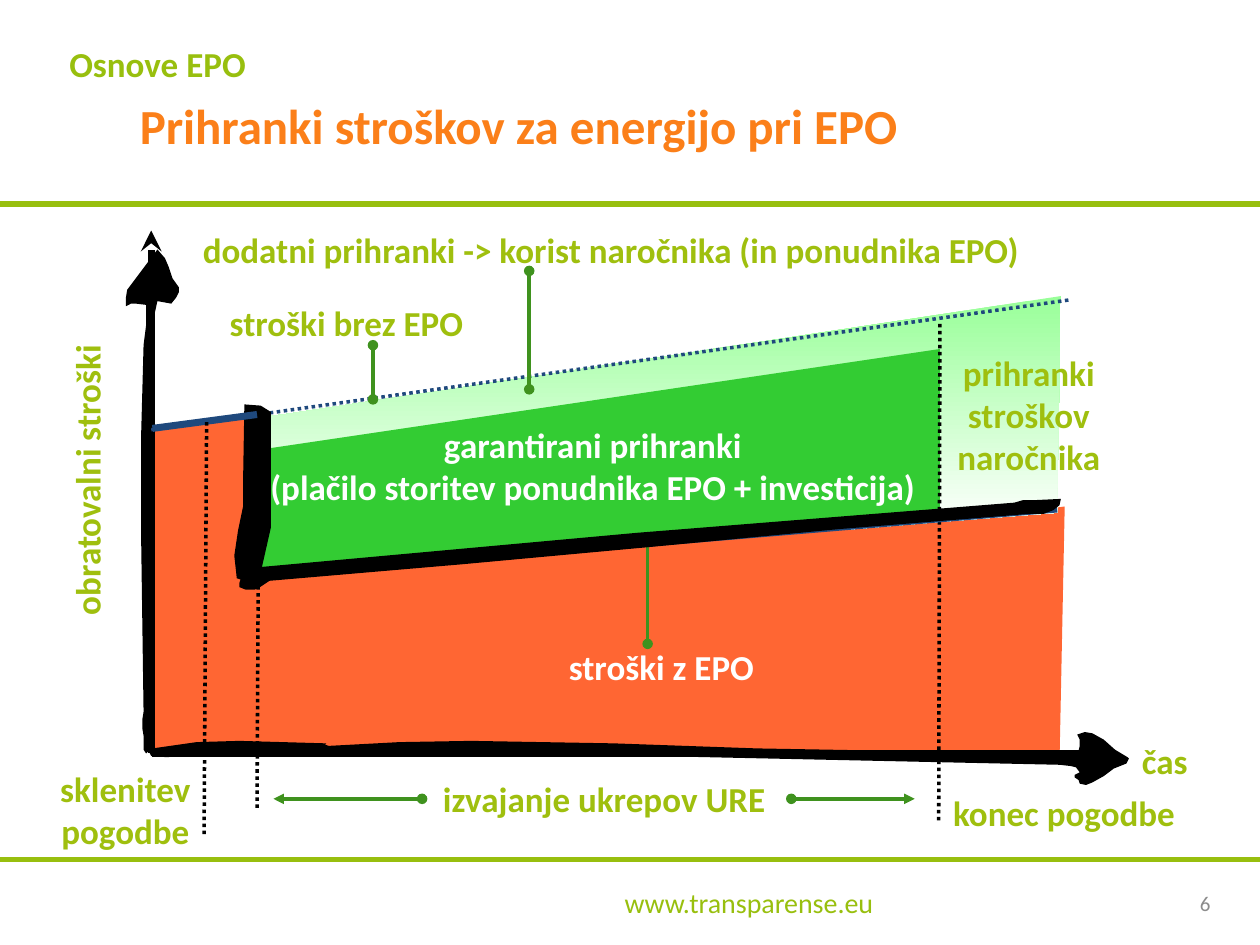
from lxml import etree
from pptx import Presentation
from pptx.dml.color import RGBColor
from pptx.enum.dml import MSO_LINE
from pptx.enum.shapes import MSO_CONNECTOR
from pptx.enum.text import MSO_ANCHOR, PP_ALIGN
from pptx.oxml.ns import qn
from pptx.util import Inches, Pt

STRAIGHT = MSO_CONNECTOR.STRAIGHT
DOTS = MSO_LINE.ROUND_DOT
TOP, MIDDLE = MSO_ANCHOR.TOP, MSO_ANCHOR.MIDDLE
LEFT, CENTER = PP_ALIGN.LEFT, PP_ALIGN.CENTER

RULE = RGBColor(0x98, 0xBF, 0x0E)
LABEL = RGBColor(0x9F, 0xBF, 0x0E)
TITLE = RGBColor(0xFB, 0x7F, 0x19)
COST = RGBColor(0xFF, 0x66, 0x33)
SAVED = RGBColor(0x33, 0xCC, 0x33)
EXTRA = RGBColor(0x99, 0xFF, 0x99)
POINTER = RGBColor(0x3F, 0x92, 0x1E)
NAVY = RGBColor(0x1F, 0x49, 0x7D)
GRAY = RGBColor(0x8C, 0x8C, 0x8C)
BLACK = RGBColor(0, 0, 0)
WHITE = RGBColor(255, 255, 255)

# Outlines as (x, y) points in inches
COST_AREA = [
    (1.2, 3.39), (1.2, 5.97), (8.41, 5.99), (8.45, 4.02), (8.3, 4.04), (6.61, 4.07),
    (6.6, 4.05), (2.03, 4.58), (2.03, 4.43), (2.04, 3.3), (1.89, 3.31)]
EXTRA_AREA = [
    (2.06, 3.31), (2.07, 3.71), (6.64, 2.89), (6.64, 4.17), (6.65, 4.21),
    (7.49, 4.14), (8.39, 4.07), (8.42, 2.35), (2.25, 3.29), (2.05, 3.31)]
SAVED_AREA = [
    (2.06, 3.57), (2.05, 4.52), (2.07, 4.53), (7.45, 4.1), (7.46, 4.02), (7.46, 2.77)]
COST_BRUSH = [
    (2.15, 3.27), (2.15, 4.19), (2.08, 4.5), (5.05, 4.23), (8.05, 3.99), (8.12, 3.97),
    (8.21, 3.97), (8.42, 3.96), (8.41, 4.01), (8.36, 4.05), (8.28, 4.08), (8.16, 4.08),
    (6.66, 4.2), (5.18, 4.34), (3.66, 4.48), (2.14, 4.61), (2.05, 4.67), (2.02, 4.68),
    (1.95, 4.68), (1.9, 4.66), (1.9, 4.63), (1.91, 4.6), (1.88, 4.59), (1.86, 4.41),
    (1.89, 4.21), (1.93, 4.02), (1.93, 3.82), (1.94, 3.21), (2.07, 3.22)]
AXIS_BRUSH = [
    (1.42, 2.28), (1.42, 2.32), (1.4, 2.36), (1.36, 2.41), (1.25, 2.39), (1.23, 2.48),
    (1.22, 2.57), (1.21, 2.76), (1.19, 3.93), (1.2, 4.51), (1.22, 5.08), (1.22, 5.51),
    (1.23, 5.72), (1.21, 5.94), (1.56, 5.89), (1.9, 5.88), (2.59, 5.9), (2.58, 5.91),
    (2.61, 5.92), (3.17, 5.89), (3.74, 5.88), (4.87, 5.9), (6.01, 5.94), (7.15, 5.96),
    (7.86, 5.98), (8.55, 6), (8.57, 5.92), (8.57, 5.87), (8.55, 5.83), (8.61, 5.81),
    (8.67, 5.82), (8.76, 5.87), (8.85, 5.95), (8.95, 6.01), (8.96, 6.02), (8.94, 6.06),
    (8.84, 6.1), (8.76, 6.16), (8.67, 6.21), (8.62, 6.23), (8.57, 6.22), (8.56, 6.19),
    (8.53, 6.17), (8.53, 6.15), (8.57, 6.13), (8.54, 6.09), (8.5, 6.08), (8.41, 6.07),
    (4.7, 5.99), (4.16, 5.97), (3.63, 5.96), (2.56, 6), (2.52, 5.96), (2.42, 5.99),
    (2.3, 6), (2.18, 5.98), (2.04, 5.98), (1.9, 5.99), (1.74, 5.98), (1.61, 5.98),
    (1.47, 5.99), (1.33, 6.01), (1.2, 6), (1.18, 5.96), (1.16, 5.98), (1.14, 5.95),
    (1.14, 5.84), (1.13, 5.78), (1.13, 5.71), (1.14, 5.65), (1.12, 4.21), (1.12, 3.48),
    (1.14, 2.74), (1.16, 2.58), (1.16, 2.42), (1.08, 2.41), (1.04, 2.41), (1, 2.43),
    (1, 2.36), (1.01, 2.3), (1.25, 1.98), (1.31, 2.05), (1.34, 2.12), (1.37, 2.21)]

# Line styles: colour, width, dash, start arrowhead, end arrowhead
STYLES = {
    "rule": (RULE, 3, None, None, None),
    "up": (BLACK, 4, None, "stealth", None),
    "right": (BLACK, 4, None, None, "stealth"),
    "date": (BLACK, 2, DOTS, None, None),
    "trend": (NAVY, 2, DOTS, None, None),
    "drop": (NAVY, 2, None, None, None),
    "level": (NAVY, 4, None, None, None),
    "pointer": (POINTER, 2, None, "oval", "oval"),
    "span": (POINTER, 2, None, "triangle", "oval")}

# Back to front: an area has points and fill, a line has style and ends
DRAWING = [
    ("rule", (0, 1.62, 10, 1.62)),
    ("rule", (0, 6.82, 10, 6.82)),
    (COST_AREA, COST),
    ("up", (1.2, 1.83, 1.2, 5.98)),
    (EXTRA_AREA, [EXTRA, WHITE]),
    (SAVED_AREA, SAVED),
    ("date", (7.46, 2.57, 7.45, 6.53)),
    ("date", (2.05, 4.54, 2.04, 6.42)),
    ("trend", (1.2, 3.41, 8.49, 2.38)),
    ("right", (1.21, 5.98, 8.85, 5.98)),
    ("pointer", (2.96, 2.74, 2.96, 3.17)),
    ("pointer", (5.14, 4.3, 5.14, 5.11)),
    ("drop", (2.05, 3.28, 2.05, 4.55)),
    ("level", (2.05, 4.57, 8.39, 4.04)),
    ("pointer", (4.2, 2.15, 4.2, 3.09)),
    (COST_BRUSH, BLACK),
    (AXIS_BRUSH, BLACK),
    ("level", (1.21, 3.4, 2.04, 3.29)),
    ("date", (1.64, 3.35, 1.62, 6.63)),
    ("span", (2.17, 6.34, 3.35, 6.34)),
    ("span", (7.26, 6.34, 6.28, 6.34))]

# Box, lines of text, and what differs from a plain chart label
BASE = dict(size=20, color=LABEL, bold=True, align=CENTER, anchor=TOP,
            inset=(0.02, 0.01), turn=0)
TEXTS = [
    ((3.82, 6.98, 4.25, 0.37), ["www.transparense.eu"],
     dict(size=16, color=RULE, bold=False, inset=(0.1, 0.05))),
    ((0.55, 0.13, 7.13, 1.26), ["Osnove EPO"],
     dict(color=RULE, align=LEFT, inset=(0, 0.21))),
    ((7.42, 6.27, 2.05, 0.36), ["konec pogodbe"], {}),
    ((3.3, 6.16, 2.99, 0.36), ["izvajanje ukrepov URE"], {}),
    ((-0.97, 3.63, 3.32, 0.36), ["obratovalni stroški"], dict(turn=270)),
    ((4.31, 5.11, 1.88, 0.36), ["stroški z EPO"], dict(color=WHITE, anchor=MIDDLE)),
    ((7.56, 2.78, 1.21, 1.03), ["prihranki stroškov", "naročnika"], {}),
    ((2, 3.35, 5.41, 0.7),
     ["garantirani prihranki", "(plačilo storitev ponudnika EPO + investicija)"],
     dict(color=WHITE)),
    ((1.53, 1.77, 7.32, 0.42),
     ["dodatni prihranki -> korist naročnika (in ponudnika EPO)"],
     dict(align=LEFT, inset=(0.08, 0.04))),
    ((1.2, 2.38, 3.1, 0.36), ["stroški brez EPO"], dict(anchor=MIDDLE)),
    ((8.85, 5.86, 0.79, 0.36), ["čas"], {}),
    ((9.25, 6.97, 0.63, 0.4), ["6"],
     dict(size=12, color=GRAY, bold=False, anchor=MIDDLE, inset=(0.1, 0.05))),
    ((0, 6.08, 1.99, 0.7), ["sklenitev pogodbe"], {})]
HEADING = "Prihranki stroškov za energijo pri EPO"


def add_area(shapes, pts, fill):
    """Draw a closed outline; a list of two colours gives a gradient."""
    pts = [(Inches(x), Inches(y)) for x, y in pts]
    pen = shapes.build_freeform(*pts[0], scale=1.0)
    pen.add_line_segments(pts[1:], close=True)
    area = pen.convert_to_shape()
    area.shadow.inherit = False
    area.line.fill.background()
    if isinstance(fill, list):
        area.fill.gradient()
        area.fill.gradient_angle = 270
        for stop, color in zip(area.fill.gradient_stops, fill):
            stop.color.rgb = color
    else:
        area.fill.solid()
        area.fill.fore_color.rgb = fill


def add_line(shapes, style, ends):
    color, width, dash, head, tail = STYLES[style]
    item = shapes.add_connector(STRAIGHT, *map(Inches, ends))
    item.line.color.rgb = color
    item.line.width = Pt(width)
    if dash:
        item.line.dash_style = dash
    pen = item.line._get_or_add_ln()
    for tag, kind in (("a:headEnd", head), ("a:tailEnd", tail)):
        if kind:
            etree.SubElement(pen, qn(tag), type=kind)
    etree.SubElement(item._element.spPr, qn("a:effectLst"))


def style_text(para, text, look):
    para.text = text
    para.alignment = look["align"]
    font = para.font
    form = dict(name="Calibri", size=Pt(look["size"]), bold=look["bold"])
    for key, value in form.items():
        setattr(font, key, value)
    font.color.rgb = look["color"]


def add_text(shapes, box, lines, extra):
    look = BASE | extra
    item = shapes.add_textbox(*map(Inches, box))
    item.rotation = look["turn"]
    frame = item.text_frame
    side, edge = map(Inches, look["inset"])
    form = dict(word_wrap=True, vertical_anchor=look["anchor"], margin_left=side,
                margin_right=side, margin_top=edge, margin_bottom=edge)
    for key, value in form.items():
        setattr(frame, key, value)
    for i, text in enumerate(lines):
        para = frame.add_paragraph() if i else frame.paragraphs[0]
        style_text(para, text, look)
    return frame


deck = Presentation()
deck.slide_width, deck.slide_height = Inches(10), Inches(7.5)
shapes = deck.slides.add_slide(deck.slide_layouts[6]).shapes
for what, how in DRAWING:
    draw = add_line if isinstance(what, str) else add_area
    draw(shapes, what, how)
frames = [add_text(shapes, *row) for row in TEXTS]
title = frames[1].add_paragraph()
style_text(title, HEADING, BASE | dict(size=28, color=TITLE))
title.space_before = Pt(6)
deck.save("out.pptx")
